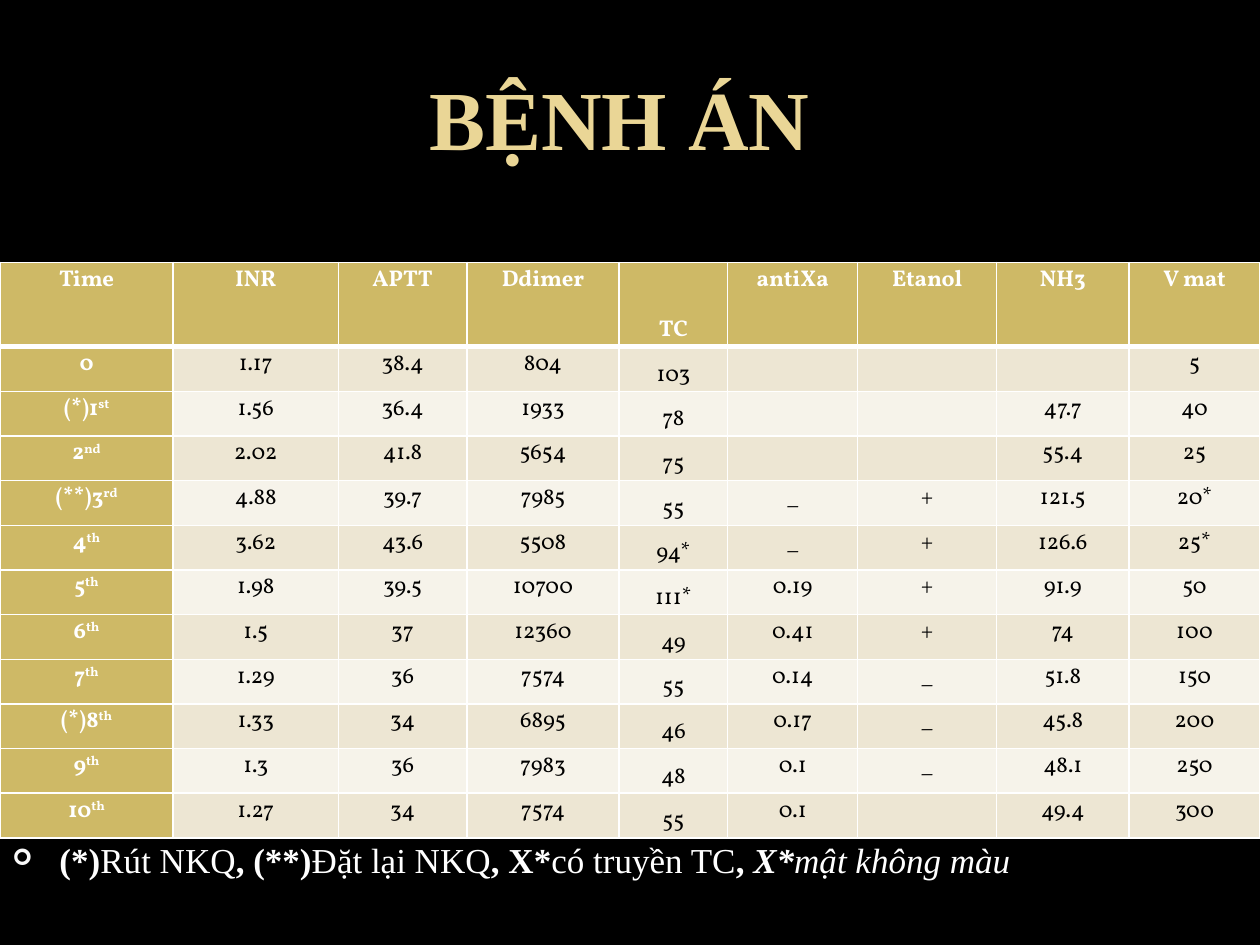
from dataclasses import dataclass

from lxml import etree
from pptx import Presentation
from pptx.dml.color import RGBColor
from pptx.enum.text import MSO_ANCHOR, PP_ALIGN
from pptx.oxml.ns import qn
from pptx.util import Cm, Pt

CENTER, LEFT = PP_ALIGN.CENTER, PP_ALIGN.LEFT
TOP, BOTTOM = MSO_ANCHOR.TOP, MSO_ANCHOR.BOTTOM
BLACK = RGBColor(0x00, 0x00, 0x00)
WHITE = RGBColor(0xFF, 0xFF, 0xFF)
CREAM = RGBColor(0xEA, 0xD6, 0x96)
GOLD = RGBColor(0xCE, 0xB9, 0x66)
SAND = RGBColor(0xED, 0xE6, 0xD3)
IVORY = RGBColor(0xF6, 0xF3, 0xEA)
BULLET_WHITE = RGBColor(0xF9, 0xF9, 0xF9)
SERIF, TABLE_FONT = "Times New Roman", "Vollkorn"


@dataclass(frozen=True)
class Piece:
    text: str
    bold: bool = False
    italic: bool = False
    raised: bool = False


@dataclass(frozen=True)
class Day:
    number: str
    suffix: str
    results: tuple[str, ...]


HEADINGS = ("Time", "INR", "APTT", "Ddimer", "TC", "antiXa", "Etanol", "NH3", "V mat")
COLUMN_WIDTHS = (3.49, 3.33, 2.59, 3.07, 2.19, 2.62, 2.8, 2.67, 2.64)
HEADING_HEIGHT, DAY_HEIGHT = 1.7, 0.9
PLATELETS = HEADINGS.index("TC")
DAYS = (
    Day("0", "", ("1.17", "38.4", "804", "103", "", "", "", "5")),
    Day("(*)1", "st", ("1.56", "36.4", "1933", "78", "", "", "47.7", "40")),
    Day("2", "nd", ("2.02", "41.8", "5654", "75", "", "", "55.4", "25")),
    Day("(**)3", "rd", ("4.88", "39.7", "7985", "55", "_", "+", "121.5", "20*")),
    Day("4", "th", ("3.62", "43.6", "5508", "94*", "_", "+", "126.6", "25*")),
    Day("5", "th", ("1.98", "39.5", "10700", "111*", "0.19", "+", "91.9", "50")),
    Day("6", "th", ("1.5", "37", "12360", "49", "0.41", "+", "74", "100")),
    Day("7", "th", ("1.29", "36", "7574", "55", "0.14", "_", "51.8", "150")),
    Day("(*)8", "th", ("1.33", "34", "6895", "46", "0.17", "_", "45.8", "200")),
    Day("9", "th", ("1.3", "36", "7983", "48", "0.1", "_", "48.1", "250")),
    Day("10", "th", ("1.27", "34", "7574", "55", "0.1", "", "49.4", "300")),
)
LEGEND = (
    Piece("(*)", bold=True), Piece("Rút NKQ"),
    Piece(", (**)", bold=True), Piece("Đặt lại NKQ"),
    Piece(", X*", bold=True), Piece("có truyền TC"),
    Piece(", ", bold=True), Piece("X*", bold=True, italic=True),
    Piece("mật không màu", italic=True),
)


def write(frame, pieces, *, size, font, color, align=CENTER, spacing=1.0):
    paragraph = frame.paragraphs[0]
    paragraph.alignment = align
    paragraph.line_spacing = spacing
    for piece in pieces:
        if not piece.text:
            continue
        run = paragraph.add_run()
        run.text = piece.text
        run.font.size = Pt(size)
        run.font.name = font
        run.font.color.rgb = color
        run.font.bold = piece.bold
        run.font.italic = piece.italic
        if piece.raised:
            run._r.get_or_add_rPr().set("baseline", "30000")
    return paragraph


def add_text_area(slide, left: float, top: float, width: float, height: float,
                  margins: tuple[float, float]):
    frame = slide.shapes.add_textbox(Cm(left), Cm(top), Cm(width), Cm(height)).text_frame
    frame.word_wrap = True
    frame.vertical_anchor = BOTTOM
    side, bottom = margins
    frame.margin_left = frame.margin_right = Cm(side)
    frame.margin_top, frame.margin_bottom = Cm(0), Cm(bottom)
    return frame


def add_bullet(paragraph, mark: str, color: RGBColor, percent: int, indent: float) -> None:
    properties = paragraph._p.get_or_add_pPr()
    properties.set("marL", str(Cm(indent)))
    properties.set("indent", str(-Cm(indent)))
    tint = etree.SubElement(properties, qn("a:buClr"))
    etree.SubElement(tint, qn("a:srgbClr"), val=str(color))
    etree.SubElement(properties, qn("a:buSzPct"), val=str(percent * 1000))
    etree.SubElement(properties, qn("a:buFont"), typeface="Wingdings")
    etree.SubElement(properties, qn("a:buChar"), char=mark)


def add_borders(cell, widths: dict[str, float]) -> None:
    properties = cell._tc.get_or_add_tcPr()
    for position, (side, width) in enumerate(widths.items()):
        line = etree.Element(qn(f"a:{side}"), w=str(Pt(width)))
        solid = etree.SubElement(line, qn("a:solidFill"))
        etree.SubElement(solid, qn("a:srgbClr"), val=str(WHITE))
        properties.insert(position, line)


def fill_cell(cell, pieces, *, fill: RGBColor, color: RGBColor, anchor,
              top_line: float, bottom_line: float) -> None:
    cell.margin_left = cell.margin_right = Cm(0.18)
    cell.margin_top = cell.margin_bottom = Cm(0)
    cell.vertical_anchor = anchor
    cell.fill.solid()
    cell.fill.fore_color.rgb = fill
    add_borders(cell, {"lnL": 1, "lnR": 1, "lnT": top_line, "lnB": bottom_line})
    write(cell.text_frame, pieces, size=13, font=TABLE_FONT, color=color, spacing=1.07)


def add_results_table(slide, left: float, top: float) -> None:
    height = HEADING_HEIGHT + DAY_HEIGHT * len(DAYS)
    table = slide.shapes.add_table(
        len(DAYS) + 1, len(HEADINGS), Cm(left), Cm(top), Cm(sum(COLUMN_WIDTHS)), Cm(height)
    ).table
    table.horz_banding = False
    for column, width in zip(table.columns, COLUMN_WIDTHS):
        column.width = Cm(width)
    lines = [[(Piece(heading, bold=True),) for heading in HEADINGS]]
    for day in DAYS:
        label = (Piece(day.number, bold=True), Piece(day.suffix, bold=True, raised=True))
        lines.append([label, *((Piece(result),) for result in day.results)])
    for row, line in enumerate(lines):
        table.rows[row].height = Cm(DAY_HEIGHT if row else HEADING_HEIGHT)
        band = SAND if row % 2 else IVORY
        for column, pieces in enumerate(line):
            is_heading = row == 0 or column == 0
            fill_cell(
                table.cell(row, column), pieces,
                fill=GOLD if is_heading else band,
                color=WHITE if is_heading else BLACK,
                anchor=BOTTOM if column == PLATELETS else TOP,
                top_line=3 if row == 1 else 1,
                bottom_line=3 if row == 0 else 1,
            )


def main() -> None:
    deck = Presentation()
    deck.slide_width, deck.slide_height = Cm(25.4), Cm(19.05)
    slide = deck.slides.add_slide(deck.slide_layouts[6])
    slide.background.fill.solid()
    slide.background.fill.fore_color.rgb = BLACK

    title = add_text_area(slide, 0, 0.05, 25.4, 3.33, margins=(0.13, 0))
    write(title, [Piece("BỆNH ÁN ", bold=True)], size=48, font=SERIF, color=CREAM)

    legend = add_text_area(slide, 0, 3.38, 25.2, 15.67, margins=(0.25, 1.4))
    note = write(legend, LEGEND, size=20, font=SERIF, color=WHITE, align=LEFT, spacing=1.4)
    add_bullet(note, "➢", BULLET_WHITE, percent=65, indent=0.95)

    add_results_table(slide, 0, 5.29)
    deck.save("out.pptx")


if __name__ == "__main__":
    main()
